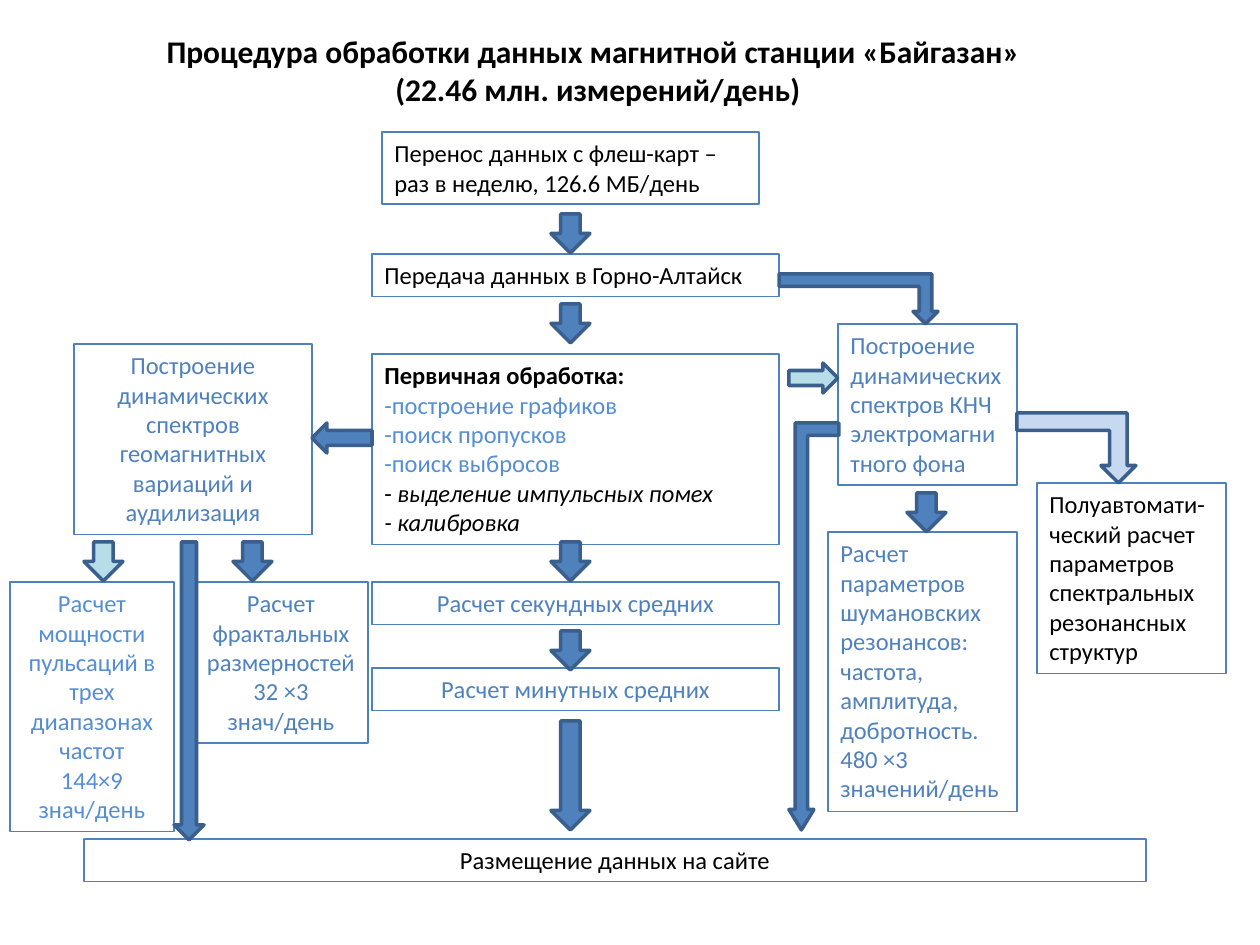
from pptx import Presentation
from pptx import util as u
from pptx.dml.color import RGBColor
from pptx.enum import shapes, text

PX = u.Inches(1) / 126
HEX = {"blue": "4F81BD", "sky": "558ED5", "black": "000000", "edge": "3A5F8C",
       "aqua": "B7DEE8", "pale": "C6D9F1"}
KIND = shapes.MSO_SHAPE
LEFT, MID = text.PP_ALIGN.LEFT, text.PP_ALIGN.CENTER

TITLE = ["Процедура обработки данных магнитной станции «Байгазан»",
         "(22.46 млн. измерений/день)"]

FIRST = [
    [("Первичная обработка:", {"bold": True})],
    [("-построение графиков", {"hue": "sky"})],
    [("-поиск пропусков", {"hue": "sky"})],
    [("-поиск выбросов", {"hue": "sky"})],
    [("- ", {}), ("выделение импульсных помех", {"italic": True})],
    [("- калибровка", {"italic": True})],
]

# left, top, width, lines of text, colour, alignment, paragraphs
BOXES = [
    (382, 132, 377, 2, "black", LEFT,
     ["Перенос данных с флеш-карт – раз в неделю, 126.6 МБ/день"]),
    (372, 254, 407, 1, "black", LEFT, ["Передача данных в Горно-Алтайск"]),
    (372, 354, 407, 6, "black", LEFT, FIRST),
    (372, 582, 407, 1, "blue", MID, ["Расчет секундных средних"]),
    (372, 668, 407, 1, "blue", MID, ["Расчет минутных средних"]),
    (828, 532, 189, 9, "blue", LEFT,
     ["Расчет параметров шумановских резонансов: частота, амплитуда, "
      "добротность. 480 ×3 значений/день"]),
    (838, 324, 179, 5, "blue", LEFT,
     ["Построение динамических спектров КНЧ электромагнитного фона"]),
    (1037, 483, 189, 6, "black", LEFT,
     ["Полуавтомати-ческий расчет параметров спектральных резонансных структур"]),
    (84, 839, 1062, 1, "black", MID, ["Размещение данных на сайте"]),
    (74, 344, 238, 6, "blue", MID,
     ["Построение динамических спектров геомагнитных вариаций и аудилизация"]),
    (194, 582, 174, 5, "blue", MID,
     ["Расчет фрактальных размерностей", "32 ×3 знач/день"]),
    (10, 582, 164, 8, "sky", MID,
     ["Расчет мощности пульсаций в трех диапазонах частот", "144×9 знач/день"]),
]

# left, top, width, height, fill
DOWN = [
    (551, 214, 39, 39, "blue"),
    (551, 304, 39, 39, "blue"),
    (551, 542, 39, 39, "blue"),
    (551, 631, 39, 39, "blue"),
    (551, 721, 39, 109, "blue"),
    (907, 493, 39, 39, "blue"),
    (174, 542, 30, 298, "blue"),
    (233, 542, 39, 39, "blue"),
    (84, 542, 39, 39, "aqua"),
]
SIDE = [
    (KIND.LEFT_ARROW, 312, 423, 60, 30, "blue"),
    (KIND.RIGHT_ARROW, 789, 363, 49, 30, "aqua"),
]
# left, top, width, height, fill, flips, third adjustment
BENT = [
    (779, 274, 159, 50, "blue", ["flipV"], 0.25),
    (1017, 413, 119, 70, "pale", ["flipV"], 0.25),
    (789, 423, 50, 407, "blue", ["flipH", "flipV"], 0.41),
]


def px(*nums):
    return [round(n * PX) for n in nums]


def rgb(name):
    return RGBColor.from_string(HEX[name])


def write(frame, paras, size=14, hue="black", bold=False, align=MID):
    """Fill a frame; a paragraph is a string or a list of (text, format) runs."""
    frame.vertical_anchor = text.MSO_ANCHOR.TOP
    for i, runs in enumerate(paras):
        para = frame.add_paragraph() if i else frame.paragraphs[0]
        para.alignment = align
        for words, extra in [(runs, {})] if isinstance(runs, str) else runs:
            run = para.add_run()
            run.text = words
            font = run.font
            font.name, font.size = "Calibri", u.Pt(size)
            font.bold = extra.get("bold", bold)
            font.italic = extra.get("italic", False)
            font.color.rgb = rgb(extra.get("hue", hue))


def draw(slide, kind, at, line, width, fill=None):
    shape = slide.shapes.add_shape(kind, *px(*at))
    shape.shadow.inherit = False
    shape.line.color.rgb = rgb(line)
    shape.line.width = u.Pt(width)
    if fill:
        shape.fill.solid()
        shape.fill.fore_color.rgb = rgb(fill)
    else:
        shape.fill.background()
    return shape


def main():
    prs = Presentation()
    prs.slide_width, prs.slide_height = px(1260, 945)
    slide = prs.slides.add_slide(prs.slide_layouts[5])

    title = slide.shapes.title
    title.left, title.top, title.width, title.height = px(154, 26, 888, 127)
    write(title.text_frame, TITLE, size=18, bold=True)
    title.text_frame.paragraphs[0].alignment = LEFT
    title.text_frame.word_wrap = False
    title.text_frame.auto_size = text.MSO_AUTO_SIZE.SHAPE_TO_FIT_TEXT

    for left, top, width, lines, hue, align, paras in BOXES:
        high = 13 + 29.6 * lines
        box = draw(slide, KIND.RECTANGLE, (left, top, width, high), "blue", 0.75)
        write(box.text_frame, paras, hue=hue, align=align)
        box.text_frame.word_wrap = True
        box.text_frame.auto_size = text.MSO_AUTO_SIZE.SHAPE_TO_FIT_TEXT

    for kind, *at, fill in [(KIND.DOWN_ARROW, *row) for row in DOWN] + SIDE:
        draw(slide, kind, at, "edge", 2, fill)

    for *at, fill, flips, bend in BENT:
        arrow = draw(slide, KIND.BENT_UP_ARROW, at, "edge", 2, fill)
        arrow.adjustments[2] = bend
        for flip in flips:
            arrow.element.spPr.xfrm.set(flip, "1")

    prs.save("out.pptx")


if __name__ == "__main__":
    main()
